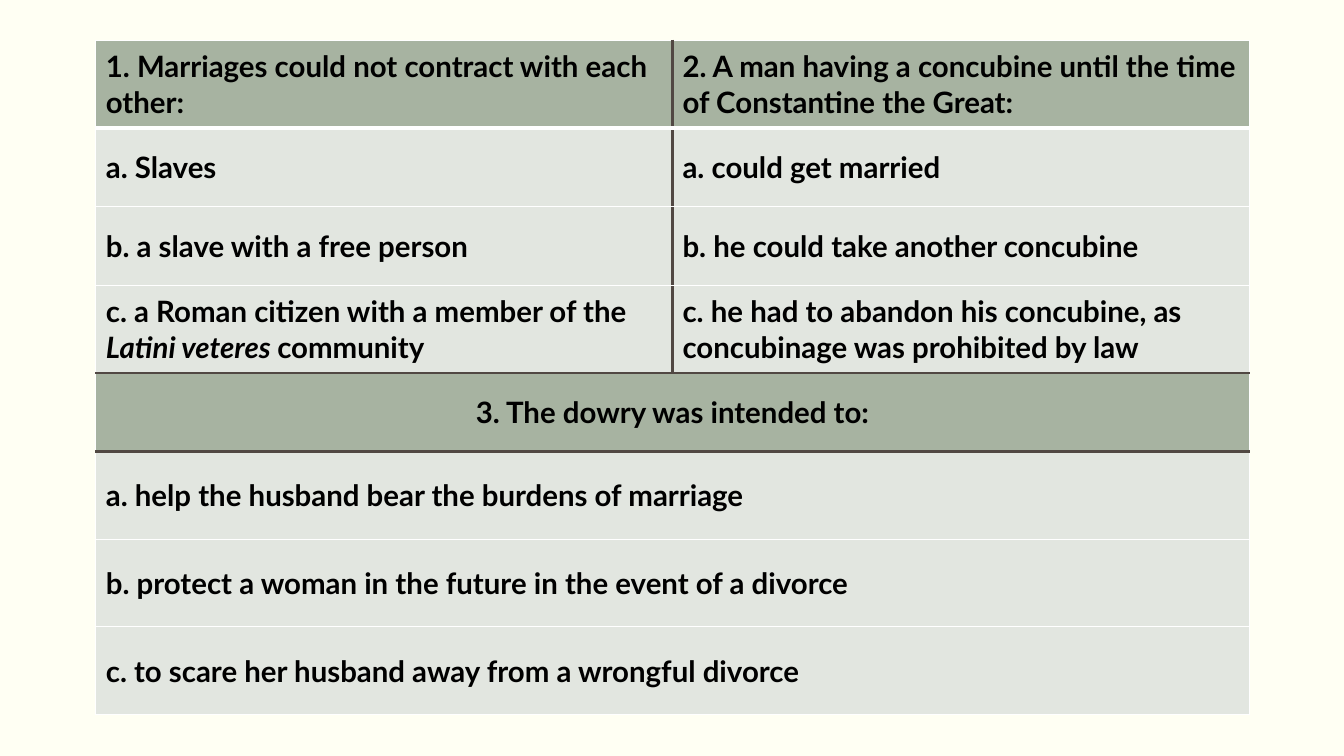
from lxml.etree import SubElement
from pptx import Presentation
from pptx.dml.color import RGBColor
from pptx.enum.text import MSO_ANCHOR, PP_ALIGN
from pptx.oxml.ns import qn
from pptx.util import Inches, Pt

PAIRED = [
    ("1. Marriages could not contract with each other:",
     "2. A man having a concubine until the time of Constantine the Great:"),
    ("a. Slaves", "a. could get married"),
    ("b. a slave with a free person", "b. he could take another concubine"),
    ("c. a Roman citizen with a member of the *Latini veteres *community",
     "c. he had to abandon his concubine, as concubinage was prohibited by law"),
]
SPANNING = [
    "3. The dowry was intended to:",
    "a. help the husband bear the burdens of marriage",
    "b. protect a woman in the future in the event of a divorce",
    "c. to scare her husband away from a wrongful divorce",
]
COLORS = {"page": "FFFFF3", "head": "A7B3A1", "body": "E2E6E0",
          "text": "000000", "light": "FFFFFF", "dark": "514843"}
TALL, SHORT = 0.87, 0.78
ROW_HEIGHTS = [TALL, SHORT, SHORT, TALL, SHORT, TALL, TALL, TALL]
LEFT, TOP, COL_WIDTH = 0.95, 0.4, 5.72
THIN, RULE, THICK = ("light", 1), ("dark", 2.25), ("light", 3)
HEADS = (0, len(PAIRED))
ROW_RULES = {1: THICK, HEADS[1]: RULE, HEADS[1] + 1: RULE}


def rgb(name):
    return RGBColor.from_string(COLORS[name])


def write(cell, text, size=21, font="Lato", color="text", align=PP_ALIGN.LEFT):
    cell.vertical_anchor = MSO_ANCHOR.MIDDLE
    p = cell.text_frame.paragraphs[0]
    p.alignment = align
    for i, part in enumerate(text.split("*")):
        r = p.add_run()
        r.text = part
        r.font.name, r.font.size = font, Pt(size)
        r.font.bold, r.font.italic = True, i % 2 == 1
        r.font.color.rgb = rgb(color)


def style(cell, fill, **borders):
    tc_pr = cell._tc.get_or_add_tcPr()
    for side in "LRTB":
        if side in borders:
            color, width = borders[side]
            ln = SubElement(tc_pr, qn(f"a:ln{side}"), w=str(Pt(width)))
            SubElement(SubElement(ln, qn("a:solidFill")), qn("a:srgbClr"), val=COLORS[color])
    cell.fill.solid()
    cell.fill.fore_color.rgb = rgb(fill)


def main():
    prs = Presentation()
    prs.slide_width, prs.slide_height = Inches(13.33), Inches(7.5)
    slide = prs.slides.add_slide(prs.slide_layouts[6])
    slide.background.fill.solid()
    slide.background.fill.fore_color.rgb = rgb("page")

    rows = PAIRED + [(text,) for text in SPANNING]
    table = slide.shapes.add_table(
        len(rows), 2, Inches(LEFT), Inches(TOP),
        Inches(2 * COL_WIDTH), Inches(sum(ROW_HEIGHTS))).table
    for col in table.columns:
        col.width = Inches(COL_WIDTH)

    for i, texts in enumerate(rows):
        table.rows[i].height = Inches(ROW_HEIGHTS[i])
        paired = len(texts) == 2
        if not paired:
            table.cell(i, 0).merge(table.cell(i, 1))
        for j in range(2):
            cell = table.cell(i, j)
            borders = {"T": ROW_RULES.get(i, THIN), "B": ROW_RULES.get(i + 1, THIN)}
            borders["LR"[j]] = THIN
            if paired:
                borders["RL"[j]] = RULE
            style(cell, "head" if i in HEADS else "body", **borders)
        for j, text in enumerate(texts):
            centred = i in HEADS and not paired
            write(table.cell(i, j), text, align=PP_ALIGN.CENTER if centred else PP_ALIGN.LEFT)

    prs.save("out.pptx")


if __name__ == "__main__":
    main()
